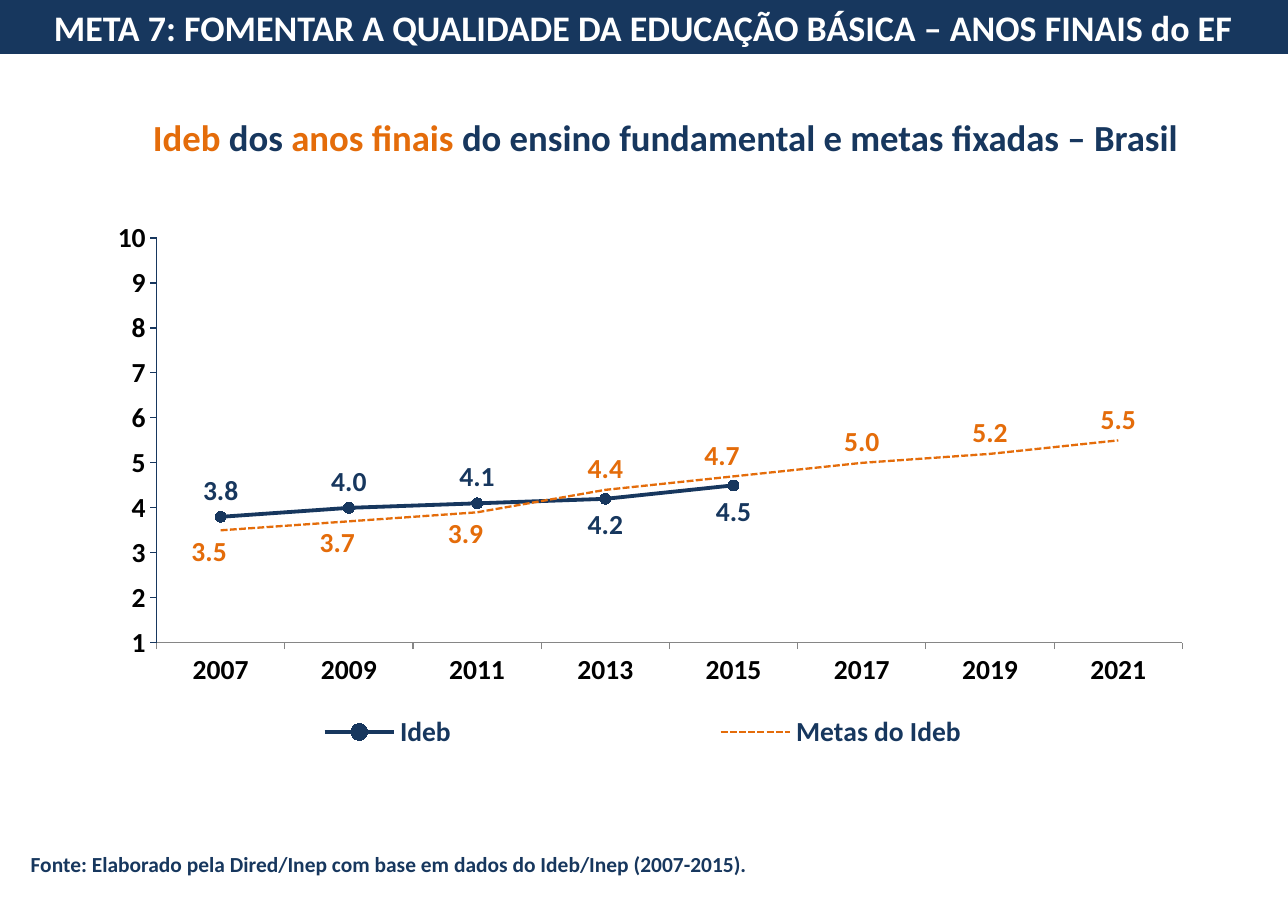
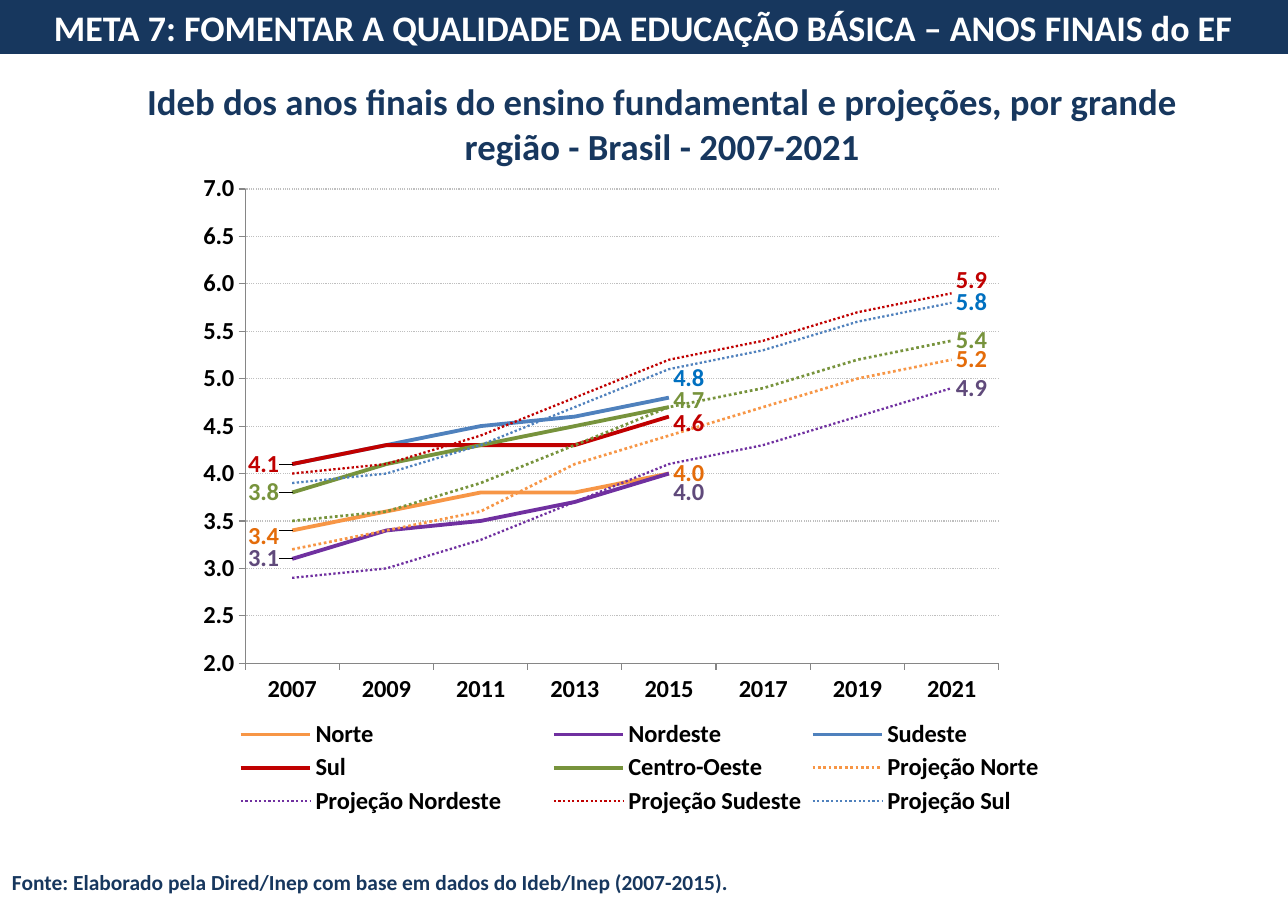
from lxml.etree import SubElement
from pptx import Presentation
from pptx.chart.data import CategoryChartData
from pptx.dml.color import RGBColor
from pptx.enum.chart import (XL_CHART_TYPE, XL_LABEL_POSITION, XL_LEGEND_POSITION,
                             XL_MARKER_STYLE, XL_TICK_MARK)
from pptx.enum.dml import MSO_LINE
from pptx.enum.shapes import MSO_SHAPE
from pptx.enum.text import MSO_ANCHOR, PP_ALIGN
from pptx.oxml.ns import qn
from pptx.util import Inches, Pt

FONT = "Calibri"
HUES = {"navy": "17375E", "orange": "E46C0A", "white": "FFFFFF", "black": "000000",
        "gray": "868686", "grid": "BFBFBF", "peach": "F79646", "purple": "7030A0",
        "plum": "604A7B", "blue": "4F81BD", "sky": "0070C0", "red": "C00000",
        "green": "77933C"}
BAND = "META 7: FOMENTAR A QUALIDADE DA EDUCAÇÃO BÁSICA – ANOS FINAIS do EF"
SOURCE = "Fonte: Elaborado pela Dired/Inep com base em dados do Ideb/Inep (2007-2015)."
YEARS = [str(year) for year in range(2007, 2022, 2)]
ABOVE, BELOW = XL_LABEL_POSITION.ABOVE, XL_LABEL_POSITION.BELOW
LEFT, RIGHT = XL_LABEL_POSITION.LEFT, XL_LABEL_POSITION.RIGHT

REAL = [
    ("Norte", "peach", "orange", [3.4, 3.6, 3.8, 3.8, 4.0],
     {0: (LEFT, -0.01, 0.01), 4: (RIGHT, 0, 0)}),
    ("Nordeste", "purple", "plum", [3.1, 3.4, 3.5, 3.7, 4.0],
     {0: (LEFT, -0.01, 0), 4: (RIGHT, 0, 0.03)}),
    ("Sudeste", "blue", "sky", [4.1, 4.3, 4.5, 4.6, 4.8], {4: (RIGHT, 0, -0.03)}),
    ("Sul", "red", "red", [4.1, 4.3, 4.3, 4.3, 4.6],
     {0: (LEFT, -0.01, 0), 4: (RIGHT, 0, 0.01)}),
    ("Centro-Oeste", "green", "green", [3.8, 4.1, 4.3, 4.5, 4.7],
     {0: (LEFT, -0.01, 0), 4: (RIGHT, 0, -0.01)}),
]
GOALS = [
    ("Norte", "peach", "orange", [3.2, 3.4, 3.6, 4.1, 4.4, 4.7, 5.0, 5.2], 1.75, 0),
    ("Nordeste", "purple", "plum", [2.9, 3.0, 3.3, 3.7, 4.1, 4.3, 4.6, 4.9], 1.5, 0),
    ("Sudeste", "red", "red", [4.0, 4.1, 4.4, 4.8, 5.2, 5.4, 5.7, 5.9], 1.5, -0.02),
    ("Sul", "blue", "sky", [3.9, 4.0, 4.3, 4.7, 5.1, 5.3, 5.6, 5.8], 1.5, 0),
    ("Centro-Oeste", "green", "green", [3.5, 3.6, 3.9, 4.3, 4.7, 4.9, 5.2, 5.4], 1.75, 0),
]


def color(name):
    """Return the named colour."""
    return RGBColor.from_string(HUES[name])


def style(font, size, hue):
    """Set the deck's bold face on a font."""
    font.name, font.size, font.bold = FONT, Pt(size), True
    font.color.rgb = color(hue)


def write(frame, parts, size, align):
    """Fill a frame with one paragraph of coloured runs."""
    frame.word_wrap = True
    para = frame.paragraphs[0]
    para.alignment = align
    for text, hue in parts:
        run = para.add_run()
        run.text = text
        style(run.font, size, hue)


def label(slide, box, parts, size, align=PP_ALIGN.LEFT, inset=(0.1, 0.05)):
    """Add a text box."""
    frame = slide.shapes.add_textbox(*map(Inches, box)).text_frame
    frame.margin_left = frame.margin_right = Inches(inset[0])
    frame.margin_top = frame.margin_bottom = Inches(inset[1])
    write(frame, parts, size, align)


def title(slide, box, parts):
    """Add the centred chart title."""
    label(slide, box, parts, 24, PP_ALIGN.CENTER, (0.11, 0.06))


def frame(slide, left, top):
    """Add the source line at a point and the top band."""
    label(slide, (left, top, 6.85, 0.34), [(SOURCE, "navy")], 14)
    band = slide.shapes.add_shape(MSO_SHAPE.RECTANGLE,
                                  *map(Inches, (-0.02, 0, 11.72, 0.49)))
    band.shadow.inherit = False
    band.fill.solid()
    band.fill.fore_color.rgb = color("navy")
    band.line.fill.background()
    band.text_frame.vertical_anchor = MSO_ANCHOR.MIDDLE
    write(band.text_frame, [(BAND, "white")], 23.5, PP_ALIGN.CENTER)


def place(node, index, values, inner=False, edge=True):
    """Give a chart part a manual layout of x, y and perhaps w, h."""
    for old in node.findall(qn("c:layout")):
        node.remove(old)
    layout = SubElement(node, qn("c:layout"))
    node.insert(index, layout)
    manual = SubElement(layout, qn("c:manualLayout"))
    pairs = [("layoutTarget", "inner")] if inner else []
    if edge:
        pairs += [("xMode", "edge"), ("yMode", "edge")]
    pairs += zip("xywh", values)
    for tag, value in pairs:
        SubElement(manual, qn("c:" + tag)).set("val", str(value))


def axes(chart, low, high, step, form, hue):
    """Style both axes of a chart."""
    value, cat = chart.value_axis, chart.category_axis
    value.minimum_scale, value.maximum_scale, value.major_unit = low, high, step
    value.has_major_gridlines = False
    value.tick_labels.number_format = form
    value.tick_labels.number_format_is_linked = False
    for axis, tint in ((value, hue), (cat, "gray")):
        axis.major_tick_mark = XL_TICK_MARK.OUTSIDE
        axis.minor_tick_mark = XL_TICK_MARK.NONE
        axis.format.line.color.rgb = color(tint)
        axis.format.line.width = Pt(0.75)


def plot(slide, box, kind, rows, size, area):
    """Add a line chart with its plot area placed."""
    data = CategoryChartData(number_format="#,##0.0")
    data.categories = YEARS
    for name, values in rows:
        data.add_series(name, values + [None] * (len(YEARS) - len(values)))
    chart = slide.shapes.add_chart(kind, *map(Inches, box), data).chart
    style(chart.font, size, "black")
    chart.has_title = False
    chart.plots[0].vary_by_categories = False
    place(chart.plots[0]._element.getparent(), 0, area, inner=True)
    return chart


def legend(chart, size, hue, area):
    """Add a legend in the given part of the chart."""
    chart.has_legend = True
    key = chart.legend
    key.position = XL_LEGEND_POSITION.BOTTOM
    key.include_in_layout = False
    style(key.font, size, hue)
    place(key._element, 1, area)


def line(series, hue, width, dash=None):
    """Style a series line without markers."""
    series.smooth = False
    series.format.line.color.rgb = color(hue)
    series.format.line.width = Pt(width)
    if dash:
        series.format.line.dash_style = dash
    series.marker.style = XL_MARKER_STYLE.NONE


def tags(series, size, hue, points, base=None):
    """Label the given points, and all others if a base position is given."""
    labels = series.data_labels
    labels.show_value = base is not None
    labels.number_format, labels.number_format_is_linked = "#,##0.0", False
    style(labels.font, size, hue)
    if base is not None:
        labels.position = base
    for index, (side, dx, dy) in points.items():
        tag = series.points[index].data_label
        style(tag.font, size, hue)
        tag.position = side
        if dx or dy:
            place(tag._get_or_add_dLbl(), 1, (dx, dy), edge=False)
    for lead in labels._element.findall(qn("c:showLeaderLines")):
        labels._element.remove(lead)


def nation(slide, box):
    """Chart the national index against its goals."""
    rows = [("Ideb", [3.8, 4.0, 4.1, 4.2, 4.5]),
            ("Metas do Ideb", [3.5, 3.7, 3.9, 4.4, 4.7, 5.0, 5.2, 5.5])]
    chart = plot(slide, box, XL_CHART_TYPE.LINE_MARKERS, rows, 18,
                 (0.08, 0.031, 0.886, 0.753))
    axes(chart, 1, 10, 1, "0", "navy")
    legend(chart, 18, "navy", (0, 0.9, 1, 0.1))
    index, goal = chart.plots[0].series
    line(index, "navy", 2.5)
    mark = index.marker
    mark.style, mark.size = XL_MARKER_STYLE.CIRCLE, 7
    mark.format.fill.solid()
    mark.format.fill.fore_color.rgb = color("navy")
    mark.format.line.color.rgb = color("navy")
    tags(index, 18, "navy", {i: (ABOVE, 0, 0) for i in range(3)}, BELOW)
    line(goal, "orange", 1.5, MSO_LINE.SQUARE_DOT)
    spots = {i: (BELOW, -0.01, 0) for i in range(3)}
    tags(goal, 18, "orange", {**spots, 4: (ABOVE, -0.01, 0)}, ABOVE)


def regions(slide, box):
    """Chart each region's index and projection."""
    rows = [(row[0], row[3]) for row in REAL]
    rows += [("Projeção " + row[0], row[3]) for row in GOALS]
    chart = plot(slide, box, XL_CHART_TYPE.LINE, rows, 16,
                 (0.088, 0.023, 0.854, 0.735))
    axes(chart, 2, 7, 0.5, "#,##0.0", "gray")
    chart.value_axis.has_major_gridlines = True
    grid = chart.value_axis.major_gridlines.format.line
    grid.color.rgb = color("grid")
    grid.width, grid.dash_style = Pt(0.75), MSO_LINE.ROUND_DOT
    legend(chart, 16, "black", (0.07, 0.84, 0.93, 0.16))
    lines = list(chart.plots[0].series)
    for series, (_, hue, tint, _, points) in zip(lines, REAL):
        line(series, hue, 2.5)
        tags(series, 16, tint, points)
    for series, (_, hue, tint, _, width, rise) in zip(lines[len(REAL):], GOALS):
        line(series, hue, width, MSO_LINE.ROUND_DOT)
        tags(series, 16, tint, {7: (RIGHT, 0, rise)})


def main():
    """Build both slides."""
    deck = Presentation()
    deck.slide_width, deck.slide_height = Inches(11.69), Inches(8.27)
    first, second = (deck.slides.add_slide(deck.slide_layouts[6]) for _ in range(2))
    title(first, (0.99, 0.98, 10.1, 0.52),
          [("Ideb", "orange"), (" dos ", "navy"), ("anos finais ", "orange"),
           ("do ensino fundamental e metas fixadas – Brasil", "navy")])
    nation(first, (0.58, 2.01, 10.51, 4.88))
    frame(first, 0.18, 7.68)
    title(second, (0.96, 0.66, 10.1, 0.92),
          [("Ideb dos anos finais do ensino fundamental e projeções, "
            "por grande região - Brasil - 2007-2021", "navy")])
    regions(second, (1.52, 1.58, 8.01, 5.86))
    frame(second, 0.01, 7.84)
    deck.save("out.pptx")


if __name__ == "__main__":
    main()
